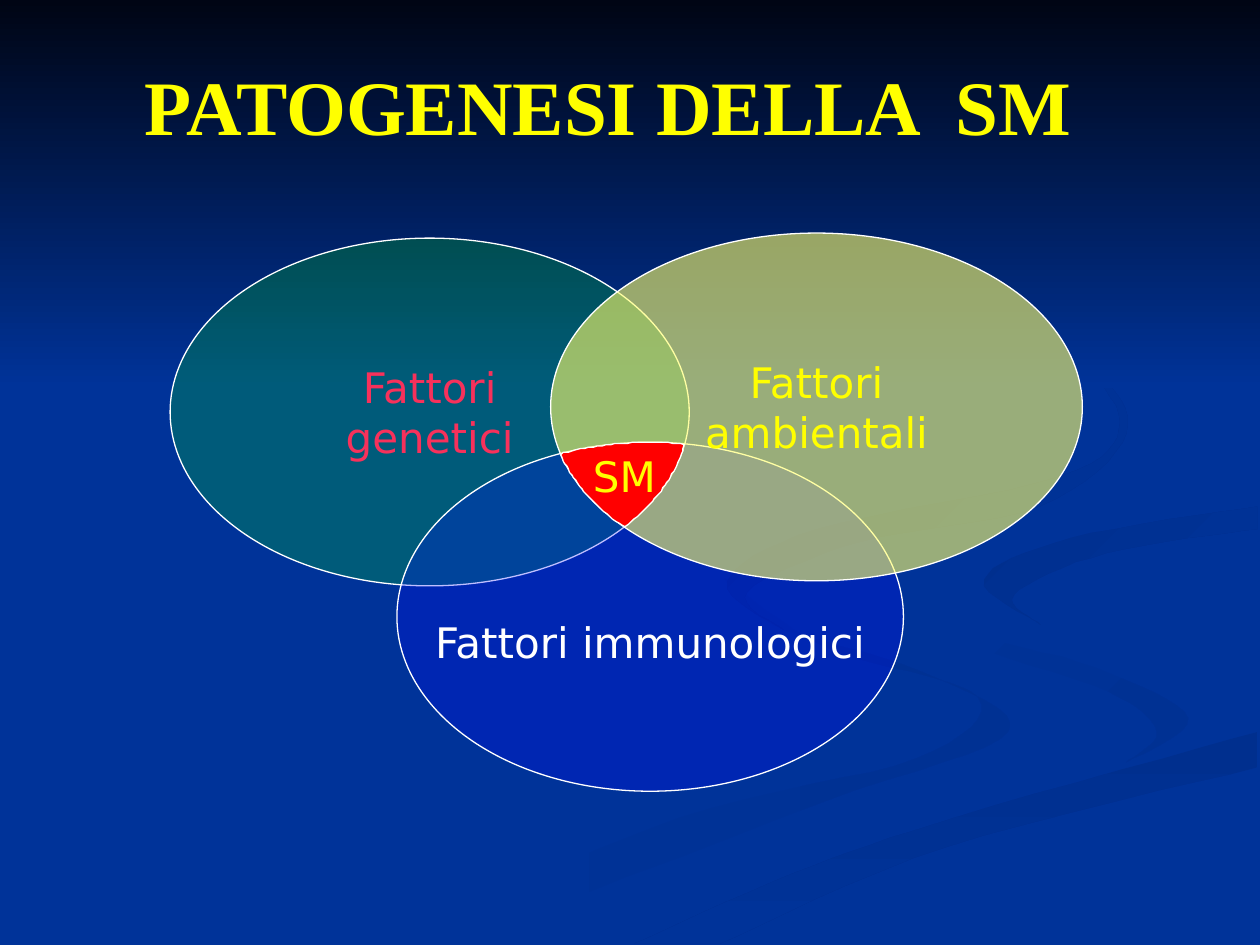
import math

import pptx
import pptx.dml.color
import pptx.enum.shapes
import pptx.enum.text
import pptx.oxml
import pptx.util
from pptx.util import Inches

RGBColor = pptx.dml.color.RGBColor
NAVY = RGBColor(0x00, 0x33, 0x99)
DEEP_NAVY = RGBColor(0x00, 0x2F, 0x8E)
NIGHT = RGBColor(0x00, 0x05, 0x14)
WHITE = RGBColor(0xFF, 0xFF, 0xFF)
YELLOW = RGBColor(0xFF, 0xFF, 0x00)
PALE_YELLOW = RGBColor(0xFF, 0xFF, 0x66)
GREEN = RGBColor(0x00, 0xFF, 0x00)
BLUE = RGBColor(0x00, 0x00, 0xFF)
RED = RGBColor(0xFF, 0x00, 0x00)
PINK = RGBColor(0xF7, 0x31, 0x5B)

BODY_FONT = {"name": "DejaVu Sans", "size": pptx.util.Pt(24)}
TITLE_FONT = {"name": "Times New Roman", "size": pptx.util.Pt(44), "bold": True}

RIBBONS = [
    ((NAVY, RGBColor(0x00, 0x31, 0x93)), 0,
     [(575, 459), (614, 496), (731, 533), (800, 581), (652, 637), (361, 749)],
     [(575, 459), (654, 513), (776, 553), (727, 602), (539, 649), (300, 749)]),
    ((NAVY, RGBColor(0x00, 0x31, 0x93)), 315,
     [(724, 464), (758, 498), (870, 530), (943, 570), (894, 605)],
     [(724, 464), (755, 505), (880, 549), (918, 581), (894, 605)]),
    ((DEEP_NAVY, NAVY), 270,
     [(503, 749), (630, 693), (764, 647), (998, 581)],
     [(571, 749), (752, 672), (998, 609)]),
    ((DEEP_NAVY, NAVY), 315,
     [(826, 496), (781, 460), (850, 427), (998, 402)],
     [(826, 496), (805, 472), (878, 439), (998, 420)]),
    ((DEEP_NAVY, NAVY), 315,
     [(762, 233), (846, 279), (889, 335), (842, 378), (649, 420), (577, 462), (622, 500)],
     [(762, 233), (864, 291), (894, 344), (825, 402), (683, 430), (593, 470), (622, 500)]),
]

FACTORS = [
    (0, 0.04, 4.12, 2.76, GREEN, 20, "Fattori\ngenetici", PINK, 0.05),
    (1.8, 1.66, 4.02, 2.77, BLUE, 25, "Fattori immunologici", WHITE, 0.44),
    (3.02, 0, 4.22, 2.76, PALE_YELLOW, 60, "Fattori\nambientali", YELLOW, 0.05),
]


def apply_format(target, values):
    """Set each attribute of the target from a dict."""
    for name, value in values.items():
        setattr(target, name, value)


def write_text(shape, text, font, color, frame_format):
    """Write centred paragraphs in one font and colour."""
    frame = shape.text_frame
    frame.text = text
    apply_format(frame, frame_format)
    for paragraph in frame.paragraphs:
        paragraph.alignment = pptx.enum.text.PP_ALIGN.CENTER
        apply_format(paragraph.runs[0].font, font)
        paragraph.runs[0].font.color.rgb = color


def fill_outlined(shape, color, opacity=100):
    """Fill a shape at an opacity in percent and give it a thin white border."""
    shape.shadow.inherit = False
    shape.fill.solid()
    shape.fill.fore_color.rgb = color
    color_element = shape.element.spPr.find(".//" + pptx.oxml.ns.qn("a:srgbClr"))
    alpha = color_element.makeelement(
        pptx.oxml.ns.qn("a:alpha"), {"val": str(opacity * 1000)})
    color_element.append(alpha)
    shape.line.color.rgb = WHITE
    shape.line.width = pptx.util.Pt(0.75)


def fill_gradient(shape, colors, angle):
    """Fill a borderless shape with a two-colour linear gradient."""
    shape.shadow.inherit = False
    shape.line.fill.background()
    shape.fill.gradient()
    shape.fill.gradient_angle = angle
    for stop, color in zip(shape.fill.gradient_stops, colors):
        stop.color.rgb = color


def smooth_edge(points, steps=8):
    """Return a Catmull-Rom curve through the points."""
    padded = [points[0], *points, points[-1]]
    curve = []
    for a, b, c, d in zip(padded, padded[1:], padded[2:], padded[3:]):
        for step in range(steps):
            t = step / steps
            curve.append(tuple(
                q + t * (r - p) / 2 + t ** 2 * (2 * p - 5 * q + 4 * r - s) / 2
                + t ** 3 * (3 * q - p - 3 * r + s) / 2
                for p, q, r, s in zip(a, b, c, d)))
    return curve + [points[-1]]


def core_points():
    """Return the outline shared by all factors, in hundredths of an inch."""
    ovals = [(x + w / 2, y + h / 2, w / 2, h / 2) for x, y, w, h, *_ in FACTORS]
    points = []
    for center_x, center_y, radius_x, radius_y in ovals:
        for degree in range(360):
            angle = math.radians(degree)
            x = center_x + radius_x * math.cos(angle)
            y = center_y + radius_y * math.sin(angle)
            if all(((x - u) / a) ** 2 + ((y - v) / b) ** 2 < 1.001 for u, v, a, b in ovals):
                points.append((100 * x, 100 * y))
    middle_x, middle_y = (sum(values) / len(points) for values in zip(*points))
    return sorted(points, key=lambda point: math.atan2(point[1] - middle_y, point[0] - middle_x))


def add_polygon(slide, points, left, top):
    """Draw a closed outline from points in hundredths of an inch."""
    builder = slide.shapes.build_freeform(*points[0], scale=Inches(0.01))
    builder.add_line_segments(points[1:], close=True)
    return builder.convert_to_shape(left, top)


def add_backdrop(slide, left, top, width):
    """Draw the background with its ribbons and dark upper band."""
    slide.background.fill.solid()
    slide.background.fill.fore_color.rgb = NAVY
    for colors, angle, outer, inner in RIBBONS:
        points = smooth_edge(outer) + smooth_edge(inner)[::-1]
        fill_gradient(add_polygon(slide, points, left, top), colors, angle)
    band = slide.shapes.add_shape(
        pptx.enum.shapes.MSO_SHAPE.RECTANGLE, left, top, width, Inches(3.08))
    fill_gradient(band, (NIGHT, NAVY), 270)


def add_title(slide, left, top, width, height):
    """Place the slide title."""
    title = slide.shapes.add_textbox(left, top, width, height)
    write_text(title, "PATOGENESI DELLA  SM", TITLE_FONT, YELLOW, {
        "word_wrap": True, "margin_top": 0, "margin_bottom": 0,
        "vertical_anchor": pptx.enum.text.MSO_ANCHOR.BOTTOM})


def add_venn(slide, left, top):
    """Draw three overlapping factors and their shared core."""
    for x, y, width, height, color, opacity, text, text_color, margin in FACTORS:
        ellipse = slide.shapes.add_shape(
            pptx.enum.shapes.MSO_SHAPE.OVAL, left + Inches(x), top + Inches(y),
            Inches(width), Inches(height))
        fill_outlined(ellipse, color, opacity)
        write_text(ellipse, text, BODY_FONT, text_color, {
            "word_wrap": False, "margin_top": Inches(margin),
            "vertical_anchor": pptx.enum.text.MSO_ANCHOR.MIDDLE})
    fill_outlined(add_polygon(slide, core_points(), left, top), RED)
    label = slide.shapes.add_textbox(
        left + Inches(3.25), top + Inches(1.68), Inches(0.71), Inches(0.5))
    write_text(label, "SM", BODY_FONT, YELLOW, {"word_wrap": False})


def main():
    """Build and save the slide."""
    presentation = pptx.Presentation()
    apply_format(presentation, {"slide_width": Inches(10), "slide_height": Inches(7.5)})
    slide = presentation.slides.add_slide(presentation.slide_layouts[6])
    add_backdrop(slide, 0, 0, presentation.slide_width)
    add_title(slide, Inches(0.58), Inches(0.47), Inches(8.5), Inches(0.73))
    add_venn(slide, Inches(1.35), Inches(1.85))
    presentation.save("out.pptx")


if __name__ == "__main__":
    main()
